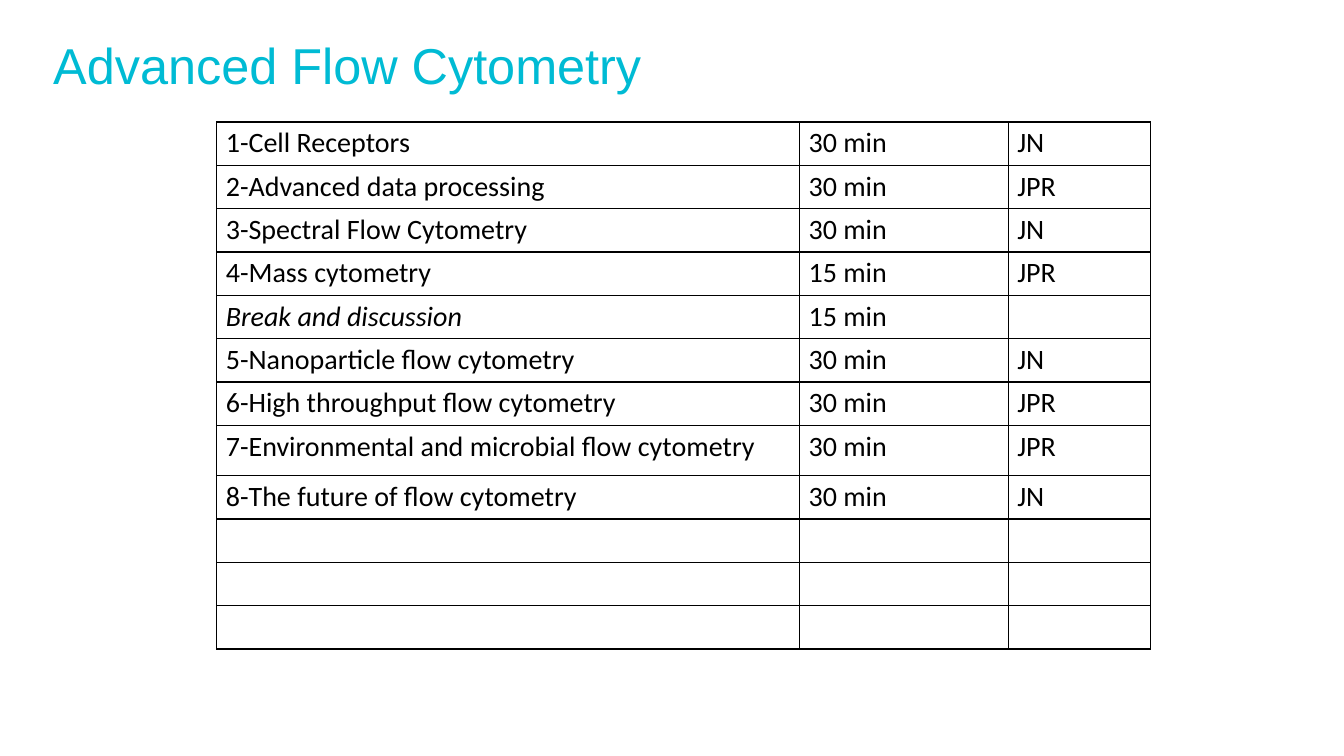
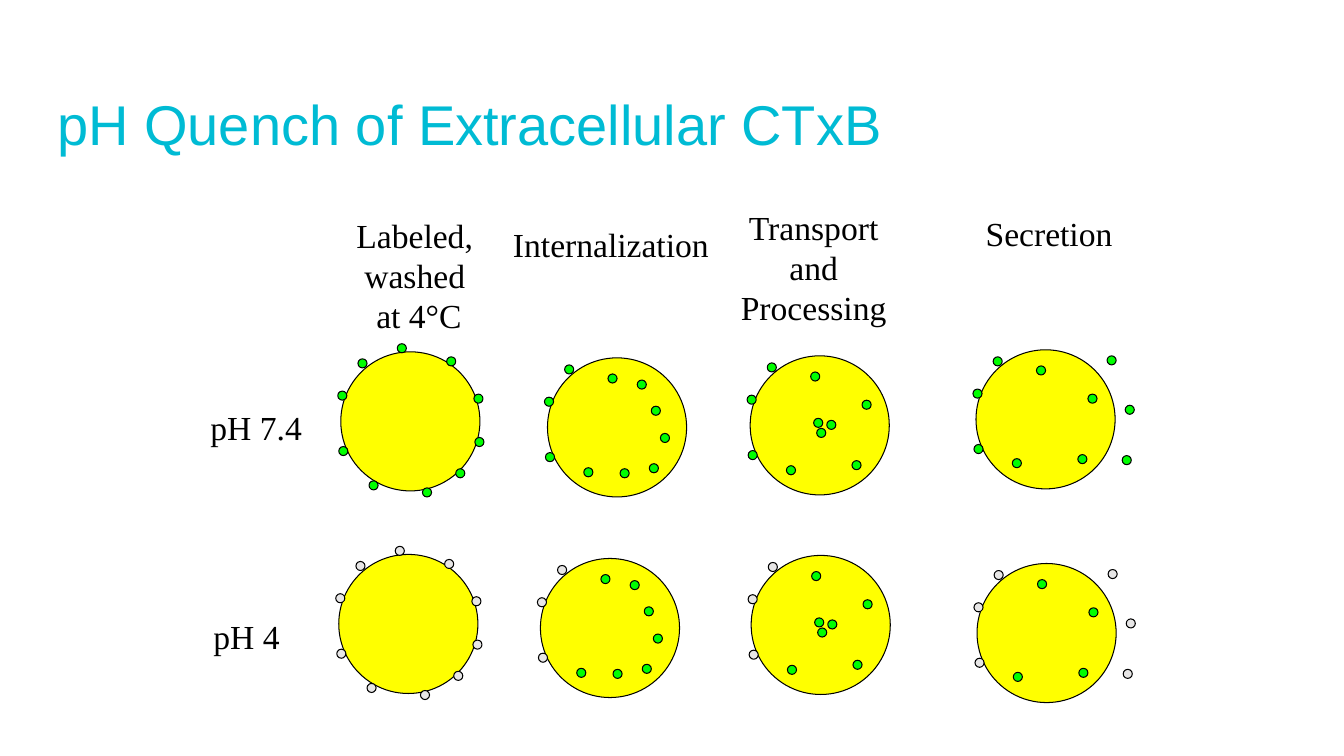
from dataclasses import dataclass

from lxml.etree import SubElement
from pptx import Presentation
from pptx.dml.color import RGBColor as RGB
from pptx.enum.shapes import MSO_SHAPE as SHAPE
from pptx.enum.text import MSO_ANCHOR as ANCHOR, PP_ALIGN as ALIGN
from pptx.oxml.ns import qn
from pptx.util import Pt

PX = 9144  # EMU per px, 100 px to the inch


@dataclass(frozen=True)
class Theme:
    title: RGB = RGB(0x00, 0xBB, 0xD4)
    ink: RGB = RGB(0x00, 0x00, 0x00)
    cell: RGB = RGB(0xFF, 0xFF, 0x00)
    bright: RGB = RGB(0x00, 0xFF, 0x00)
    quenched: RGB = RGB(0xE7, 0xE6, 0xE6)
    title_font: str = "Arial"
    table_font: str = "Calibri"
    label_font: str = "Times New Roman"
    agenda_title_size: int = 36
    quench_title_size: int = 40
    table_size: int = 20
    label_size: int = 24


theme = Theme()


def add_text(page, lines, left, top, width, height, size, is_title=False):
    """Add a left-aligned title or a centred, unwrapped label."""
    box = page.shapes.add_textbox(left * PX, top * PX, width * PX, height * PX)
    frame = box.text_frame
    frame.word_wrap = is_title
    frame.vertical_anchor = ANCHOR.MIDDLE if is_title else ANCHOR.TOP
    for index, line in enumerate(lines):
        para = frame.add_paragraph() if index else frame.paragraphs[0]
        para.alignment = ALIGN.LEFT if is_title else ALIGN.CENTER
        if is_title:
            para.line_spacing = 0.9
        span = para.add_run()
        span.text = line
        span.font.name = theme.title_font if is_title else theme.label_font
        span.font.size = Pt(size)
        span.font.color.rgb = theme.title if is_title else theme.ink


def add_disc(page, left, top, diameter, color):
    disc = page.shapes.add_shape(
        SHAPE.OVAL, left * PX, top * PX, diameter * PX, diameter * PX)
    disc.shadow.inherit = False
    disc.fill.solid()
    disc.fill.fore_color.rgb = color
    disc.line.color.rgb = theme.ink
    disc.line.width = Pt(0.75)


deck = Presentation()
deck.slide_width, deck.slide_height = 1333 * PX, 750 * PX
blank = deck.slide_layouts[6]

# Course agenda
page = deck.slides.add_slide(blank)
add_text(page, ["Advanced Flow Cytometry"], 43, 43, 1150, 50,
         theme.agenda_title_size, is_title=True)

sessions = [
    ("1-Cell Receptors", "30 min", "JN"),
    ("2-Advanced data processing", "30 min", "JPR"),
    ("3-Spectral Flow Cytometry", "30 min", "JN"),
    ("4-Mass cytometry", "15 min", "JPR"),
    ("Break and discussion", "15 min", ""),
    ("5-Nanoparticle flow cytometry", "30 min", "JN"),
    ("6-High throughput flow cytometry", "30 min", "JPR"),
    ("7-Environmental and microbial flow cytometry", "30 min", "JPR"),
    ("8-The future of flow cytometry", "30 min", "JN"),
] + [("", "", "")] * 3
column_widths = [578, 207, 141]
row_height, tall_row, tall_row_height = 43, 7, 50

table = page.shapes.add_table(
    len(sessions), len(column_widths), 215 * PX, 121 * PX,
    sum(column_widths) * PX, row_height * len(sessions) * PX).table
table.first_row = table.horz_banding = False
for column, width in zip(table.columns, column_widths):
    column.width = width * PX
for index, (row, session) in enumerate(zip(table.rows, sessions)):
    row.height = (tall_row_height if index == tall_row else row_height) * PX
    for cell, text in zip(row.cells, session):
        cell.margin_left = cell.margin_right = 9 * PX
        cell.margin_top = cell.margin_bottom = 4 * PX
        properties = cell._tc.get_or_add_tcPr()
        for side in ("a:lnL", "a:lnR", "a:lnT", "a:lnB"):
            border = SubElement(properties, qn(side), w=str(Pt(1)))
            fill = SubElement(border, qn("a:solidFill"))
            SubElement(fill, qn("a:srgbClr"), val=str(theme.ink))
        cell.fill.background()
        para = cell.text_frame.paragraphs[0]
        para.font.size = Pt(theme.table_size)
        if text:
            span = para.add_run()
            span.text = text
            span.font.name = theme.table_font
            span.font.size = Pt(theme.table_size)
            span.font.color.rgb = theme.ink
            span.font.italic = text == "Break and discussion"

# Quenching: labels outside the cell lose their signal at pH 4
page = deck.slides.add_slide(blank)
add_text(page, ["pH Quench of Extracellular CTxB"], 47, 101, 1150, 50,
         theme.quench_title_size, is_title=True)

labels = [
    (["Labeled, ", "washed ", "at 4°C"], 343, 208, 145, 131),
    (["Internalization"], 498, 217, 216, 50),
    (["Transport", "and", "Processing"], 724, 200, 166, 131),
    (["Secretion"], 967, 206, 147, 50),
    (["pH 7.4"], 198, 399, 112, 50),
    (["pH 4"], 201, 606, 87, 50),
]
for lines, *place in labels:
    add_text(page, lines, *place, theme.label_size)

cell_diameter, dot_diameter = 138, 9
# Dot offsets are measured from the top left of their cell
surface_dots = [(-2, 94), (-3, 39), (17, 7)]
# Cell place at pH 7.4, cell place at pH 4, further outside dots, inside dots
stages = [
    ((338, 349), (336, 550),
     [(56, -8), (105, 5), (132, 42), (133, 85), (114, 116), (28, 128), (81, 135)],
     []),
    ((543, 355), (536, 554),
     [],
     [(60, 16), (89, 22), (103, 48), (112, 75), (101, 105), (36, 109), (72, 110)]),
    ((744, 353), (745, 551),
     [],
     [(60, 16), (63, 62), (111, 44), (76, 64), (101, 104), (36, 109), (66, 72)]),
    ((968, 347), (969, 559),
     [(130, 6), (148, 55), (145, 105)],
     [(60, 16), (111, 44), (101, 104), (36, 108)]),
]
for neutral_place, acid_place, outside_dots, inside_dots in stages:
    for (left, top), outside_color in ((neutral_place, theme.bright),
                                       (acid_place, theme.quenched)):
        add_disc(page, left, top, cell_diameter, theme.cell)
        for dots, color in ((inside_dots, theme.bright),
                            (surface_dots + outside_dots, outside_color)):
            for across, down in dots:
                add_disc(page, left + across, top + down, dot_diameter, color)

deck.save("out.pptx")
